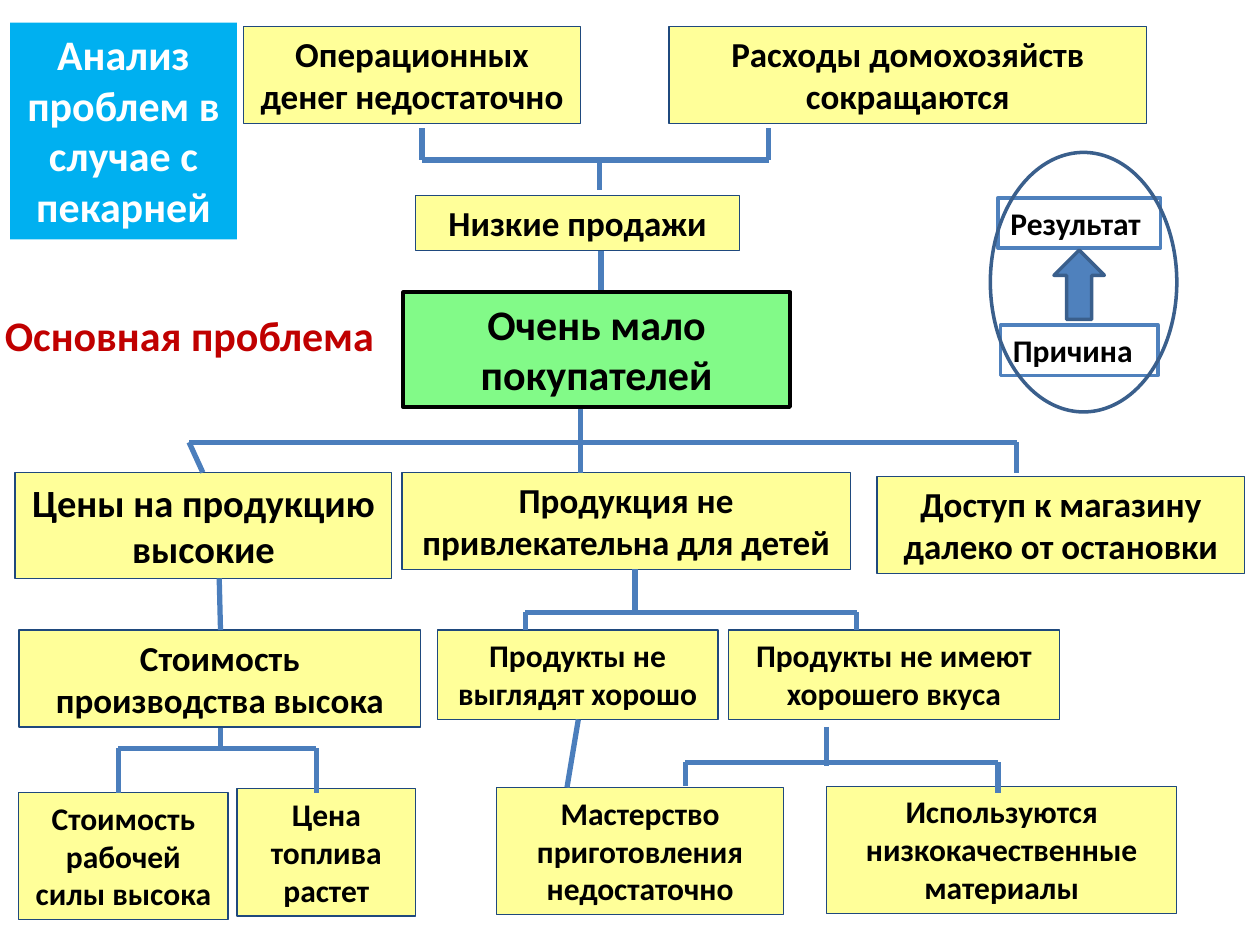
import pptx
import pptx.util
import pptx.dml.color
import pptx.enum.shapes
import pptx.enum.text
import pptx.oxml.ns
from lxml import etree

Inches, Pt = pptx.util.Inches, pptx.util.Pt
SHAPE = pptx.enum.shapes.MSO_SHAPE
ALIGN = pptx.enum.text.PP_ALIGN

THEME = {
    "font": "Calibri",
    "black": "000000", "white": "FFFFFF", "red": "C00000",
    "yellow": "FFFF99", "green": "82FA88", "sky": "00B0F0",
    "navy": "1F497D", "blue": "4F81BD", "dark": "3A5F8C", "link": "4B7EBC",
    "heading": 24, "strong": 22, "body": 20, "small": 18,
    "thin": 0.75, "medium": 2, "thick": 2.25, "branch": 3,
}

TITLE = ("Анализ проблем в случае с пекарней", (0.08, 0.18, 1.8, 1.72))
MAIN_LABEL = ("Основная проблема", (-0.06, 2.41, 3.17, 0.5))
CORE = ("Очень мало покупателей", (3.2, 2.32, 3.07, 0.91))

# text, (left, top, width, height), type size
PROBLEMS = [
    ("Операционных денег недостаточно", (1.93, 0.21, 2.68, 0.77), "body"),
    ("Расходы домохозяйств сокращаются", (5.31, 0.21, 3.79, 0.77), "body"),
    ("Низкие продажи", (3.3, 1.55, 2.57, 0.44), "body"),
    ("Цены на продукцию высокие", (0.12, 3.75, 2.99, 0.84), "strong"),
    ("Продукция не привлекательна для детей", (3.19, 3.75, 3.56, 0.77), "body"),
    ("Доступ к магазину далеко от остановки", (6.96, 3.78, 2.92, 0.77), "body"),
    ("Стоимость производства высока", (0.15, 5, 3.19, 0.77), "body"),
    ("Продукты не выглядят хорошо", (3.47, 5, 2.23, 0.71), "small"),
    ("Продукты не имеют хорошего вкуса", (5.78, 5, 2.63, 0.71), "small"),
    ("Стоимость рабочей силы высока", (0.15, 6.29, 1.66, 1.01), "small"),
    ("Цена топлива растет", (1.88, 6.26, 1.42, 1.01), "small"),
    ("Мастерство приготовления недостаточно", (3.94, 6.25, 2.28, 1.01), "small"),
    ("Используются низкокачественные материалы", (6.56, 6.24, 2.78, 1.01), "small"),
]

# bar (left, right, y), stem (x, from y, to y), ends of the two legs
BRACKETS = [
    ((3.35, 6.1, 1.27), (4.76, 1.27, 1.51), ((3.35, 1.02), (6.1, 1.02))),
    ((1.5, 8.07, 3.51), (4.61, 3.23, 3.75), ((1.61, 3.75), (8.07, 3.75))),
    ((4.17, 6.8, 4.86), (5.04, 4.52, 4.86), ((4.17, 5), (6.8, 5))),
    ((0.94, 2.51, 5.94), (1.75, 5.78, 5.94), ((0.94, 6.29), (2.51, 6.29))),
    ((5.44, 7.92, 6.05), (6.56, 5.77, 6.08), ((5.44, 6.24), (7.92, 6.29))),
]
SINGLE_LINKS = [
    ((4.77, 1.99), (4.77, 2.32)),
    ((1.74, 4.59), (1.75, 5)),
    ((4.59, 5.71), (4.5, 6.25)),
]

LEGEND = [
    ("Причина", (7.94, 2.58, 1.25, 0.4)),
    ("Результат", (7.92, 1.57, 1.29, 0.4)),
]
LEGEND_ARROW = (8.29, 2.06, 0.55, 0.4)
LEGEND_RING = (7.86, 1.21, 1.48, 2.06)


def color(name):
    return pptx.dml.color.RGBColor.from_string(THEME[name])


def write(s, text, size="body", ink="black", align=ALIGN.CENTER):
    tf = s.text_frame
    tf.word_wrap = True
    tf.auto_size = pptx.enum.text.MSO_AUTO_SIZE.NONE
    tf.vertical_anchor = pptx.enum.text.MSO_ANCHOR.TOP
    p = tf.paragraphs[0]
    p.alignment = align
    p.line_spacing = 1.0
    p.space_before = Pt(0)
    r = p.add_run()
    r.text = text
    r.font.name = THEME["font"]
    r.font.size = Pt(THEME[size])
    r.font.bold = True
    r.font.color.rgb = color(ink)


def add_figure(slide, kind, box, fill=None, line="navy", weight="thin"):
    s = slide.shapes.add_shape(kind, *map(Inches, box))
    s.shadow.inherit = False
    if fill:
        s.fill.solid()
        s.fill.fore_color.rgb = color(fill)
    else:
        s.fill.background()
    s.line.color.rgb = color(line)
    s.line.width = Pt(THEME[weight])
    return s


def add_link(slide, start, end):
    s = slide.shapes.add_connector(
        pptx.enum.shapes.MSO_CONNECTOR.STRAIGHT, *map(Inches, (*start, *end)))
    s.line.color.rgb = color("link")
    s.line.width = Pt(THEME["branch"])
    etree.SubElement(s._element.spPr, pptx.oxml.ns.qn("a:effectLst"))


def add_bracket(slide, bar, stem, leg_ends):
    left, right, y = bar
    x, top, bottom = stem
    corners = ((left, y), (right, y))
    add_link(slide, *corners)
    add_link(slide, (x, top), (x, bottom))
    for corner, end in zip(corners, leg_ends):
        add_link(slide, corner, end)


def add_title(slide, text, box):
    s = slide.shapes.title
    s.left, s.top, s.width, s.height = map(Inches, box)
    s.fill.solid()
    s.fill.fore_color.rgb = color("sky")
    write(s, text, size="heading", ink="white")


def main():
    prs = pptx.Presentation()
    prs.slide_width, prs.slide_height = Inches(10), Inches(7.5)
    slide = prs.slides.add_slide(prs.slide_layouts[5])

    add_title(slide, *TITLE)
    text, box = MAIN_LABEL
    write(slide.shapes.add_textbox(*map(Inches, box)), text,
          size="heading", ink="red", align=ALIGN.LEFT)

    for text, box, size in PROBLEMS:
        write(add_figure(slide, SHAPE.RECTANGLE, box, fill="yellow"), text, size=size)
    for bracket in BRACKETS:
        add_bracket(slide, *bracket)
    for start, end in SINGLE_LINKS:
        add_link(slide, start, end)

    text, box = CORE
    write(add_figure(slide, SHAPE.RECTANGLE, box, fill="green", line="black",
                     weight="thick"), text, size="heading")

    for text, box in LEGEND:
        s = add_figure(slide, SHAPE.RECTANGLE, box, line="blue", weight="medium")
        write(s, text, size="small", align=ALIGN.LEFT)
    arrow = add_figure(slide, SHAPE.RIGHT_ARROW, LEGEND_ARROW, fill="blue",
                       line="dark", weight="medium")
    arrow.rotation = 270
    add_figure(slide, SHAPE.OVAL, LEGEND_RING, line="dark", weight="medium")

    prs.save("out.pptx")


if __name__ == "__main__":
    main()
